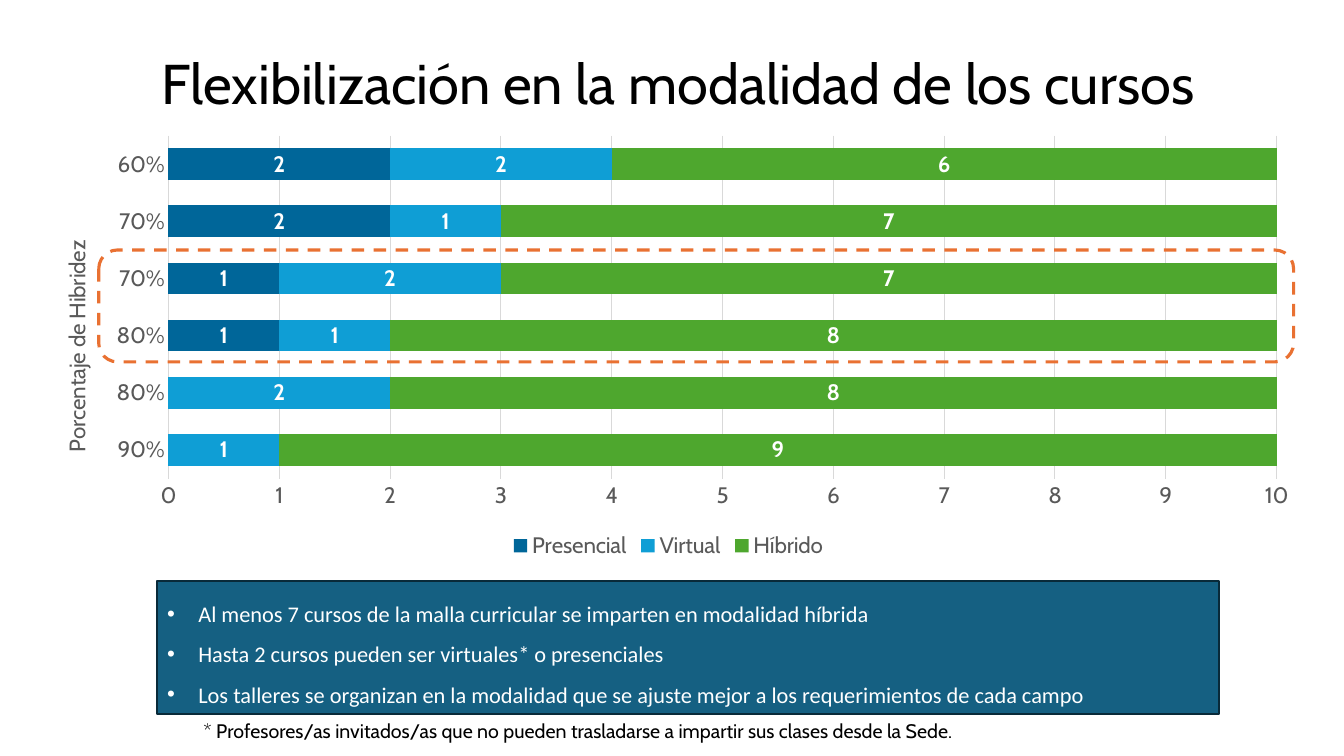
from lxml.etree import SubElement
from pptx import Presentation
from pptx.chart.data import CategoryChartData
from pptx.dml.color import RGBColor
from pptx.enum.chart import XL_CHART_TYPE, XL_LEGEND_POSITION, XL_TICK_MARK
from pptx.enum.dml import MSO_LINE
from pptx.enum.shapes import MSO_SHAPE
from pptx.enum.text import MSO_ANCHOR, MSO_AUTO_SIZE, PP_ALIGN
from pptx.oxml import parse_xml
from pptx.oxml.ns import nsdecls, qn
from pptx.util import Inches, Pt

HYBRID_SHARES = [0.9, 0.8, 0.8, 0.7, 0.7, 0.6]
COURSES = [
    ("Presencial", [0, 0, 1, 1, 2, 2], "006699"),
    ("Virtual", [1, 2, 1, 2, 1, 2], "0F9ED5"),
    ("Híbrido", [9, 8, 8, 7, 7, 6], "4EA72E"),
]
KEY_POINTS = [
    "Al menos 7 cursos de la malla curricular se imparten en modalidad híbrida",
    "Hasta 2 cursos pueden ser virtuales* o presenciales",
    "Los talleres se organizan en la modalidad que se ajuste mejor a los requerimientos de cada campo",
]


def color(hex_code):
    return RGBColor.from_string(hex_code)


def manual_layout(x, y, width=None, height=None):
    """Chart layout given in shares of the chart's size."""
    parts = [("xMode", "edge"), ("yMode", "edge"), ("x", x), ("y", y)]
    if width:
        parts = [("layoutTarget", "inner")] + parts + [("w", width), ("h", height)]
    body = "".join(f'<c:{tag} val="{value}"/>' for tag, value in parts)
    return parse_xml(f'<c:layout {nsdecls("c")}><c:manualLayout>{body}</c:manualLayout></c:layout>')


class CourseSlide:
    """Places elements on a grid of 100 columns by 100 rows."""

    FONT = "Cabin"
    PANEL_FONT = "Calibri"
    GRAY = "595959"
    GRID = "D9D9D9"

    def __init__(self, presentation):
        self.column = presentation.slide_width / 100
        self.row = presentation.slide_height / 100
        self.slide = presentation.slides.add_slide(presentation.slide_layouts[6])

    def place(self, left, top, width, height):
        return (round(left * self.column), round(top * self.row),
                round(width * self.column), round(height * self.row))

    def style_font(self, font, size, hex_code, bold=False, name=FONT):
        font.name, font.size, font.bold = name, Pt(size), bold
        font.color.rgb = color(hex_code)

    def style_line(self, line, hex_code, width):
        line.color.rgb = color(hex_code)
        line.width = Pt(width)

    def text(self, box, content, size, anchor=MSO_ANCHOR.TOP, spacing=1.0):
        frame = self.slide.shapes.add_textbox(*self.place(*box)).text_frame
        frame.word_wrap = True
        frame.vertical_anchor = anchor
        paragraph = frame.paragraphs[0]
        paragraph.text = content
        paragraph.line_spacing = spacing
        self.style_font(paragraph.font, size, "000000")

    def outlined_shape(self, kind, box, line, width, fill=None):
        shape = self.slide.shapes.add_shape(kind, *self.place(*box))
        shape.shadow.inherit = False
        if fill:
            shape.fill.solid()
            shape.fill.fore_color.rgb = color(fill)
        else:
            shape.fill.background()
        self.style_line(shape.line, line, width)
        return shape

    def highlight(self, box):
        frame = self.outlined_shape(MSO_SHAPE.ROUNDED_RECTANGLE, box, "E97132", 2.25)
        frame.line.dash_style = MSO_LINE.DASH

    def bullet_panel(self, box, points):
        panel = self.outlined_shape(MSO_SHAPE.RECTANGLE, box, "092A39", 1.5, "156082")
        frame = panel.text_frame
        frame.word_wrap = True
        frame.auto_size = MSO_AUTO_SIZE.SHAPE_TO_FIT_TEXT
        frame.vertical_anchor = MSO_ANCHOR.MIDDLE
        indent = Inches(0.31)
        for index, point in enumerate(points):
            paragraph = frame.add_paragraph() if index else frame.paragraphs[0]
            paragraph.text = point
            paragraph.alignment = PP_ALIGN.LEFT
            paragraph.line_spacing = 1.5
            self.style_font(paragraph.font, 16, "FFFFFF", name=self.PANEL_FONT)
            properties = paragraph._p.get_or_add_pPr()
            properties.set("marL", str(indent))
            properties.set("indent", str(-indent))
            bullet_font = parse_xml(f'<a:buFont {nsdecls("a")} typeface="Arial"/>')
            properties.find(qn("a:lnSpc")).addnext(bullet_font)
            bullet = SubElement(properties, qn("a:buChar"), char="•")
            bullet_font.addnext(bullet)

    def stacked_bars(self, box, categories, series_rows, axis_title):
        data = CategoryChartData()
        data.categories = categories
        data.categories.number_format = "0%"
        for name, values, _ in series_rows:
            data.add_series(name, values)
        chart = self.slide.shapes.add_chart(
            XL_CHART_TYPE.BAR_STACKED, *self.place(*box), data).chart
        self.style_font(chart.font, 16, self.GRAY)
        chart.has_title = False

        # Bars and their labels; zero values stay unlabelled
        plot = chart.plots[0]
        plot.gap_width, plot.overlap = 80, 100
        plot.vary_by_categories = False
        for series, (_, _, fill) in zip(plot.series, series_rows):
            series.format.fill.solid()
            series.format.fill.fore_color.rgb = color(fill)
            labels = series.data_labels
            labels.show_value = True
            labels.number_format = "0;;"
            labels.number_format_is_linked = False
            self.style_font(labels.font, 16, "FFFFFF", bold=True)

        # Axes
        category_axis, value_axis = chart.category_axis, chart.value_axis
        for axis in (category_axis, value_axis):
            axis.major_tick_mark = axis.minor_tick_mark = XL_TICK_MARK.NONE
            self.style_font(axis.tick_labels.font, 16, self.GRAY)
        category_axis.tick_labels.number_format = "0%"
        category_axis.tick_labels.number_format_is_linked = False
        self.style_line(category_axis.format.line, self.GRID, 0.75)
        value_axis.minimum_scale, value_axis.maximum_scale = 0, 10
        value_axis.major_unit = 1
        value_axis.format.line.fill.background()
        self.style_line(value_axis.major_gridlines.format.line, self.GRID, 0.75)

        # Axis title, read upwards
        title = category_axis.axis_title
        title.text_frame.text = axis_title
        self.style_font(title.text_frame.paragraphs[0].font, 16, self.GRAY)
        title.text_frame._txBody.bodyPr.set("rot", "-5400000")
        title.text_frame._txBody.bodyPr.set("vert", "horz")
        self.set_layout(title._element, manual_layout(0.02, 0.24), "c:tx")

        # Legend and plot area
        chart.has_legend = True
        chart.legend.position = XL_LEGEND_POSITION.BOTTOM
        chart.legend.include_in_layout = False
        self.style_font(chart.legend.font, 16, self.GRAY)
        plot_area = chart._chartSpace.chart.plotArea
        self.set_layout(plot_area, manual_layout(0.107, 0.006, 0.871, 0.797))

    def set_layout(self, element, layout, after=None):
        for old in element.findall(qn("c:layout")):
            element.remove(old)
        if after:
            element.find(qn(after)).addnext(layout)
        else:
            element.insert(0, layout)


def main():
    presentation = Presentation()
    presentation.slide_width = Inches(13.33)
    presentation.slide_height = Inches(7.5)
    page = CourseSlide(presentation)

    # Title
    page.text((11.25, 5.07, 82.37, 12.8), "Flexibilización en la modalidad de los cursos",
              40, MSO_ANCHOR.MIDDLE, 0.9)
    # Courses by mode, with the recommended range framed
    page.stacked_bars((2.4, 17.6, 94.67, 56.93), HYBRID_SHARES, COURSES,
                      "Porcentaje de Hibridez")
    page.highlight((7.35, 33.07, 88.9, 14.8))
    # Key points and footnote
    page.bullet_panel((11.7, 76.8, 79, 17.6), KEY_POINTS)
    page.text((14.4, 94.4, 80.57, 4.53),
              "* Profesores/as invitados/as que no pueden trasladarse a impartir sus clases desde la Sede.", 14)

    presentation.save("out.pptx")


if __name__ == "__main__":
    main()
